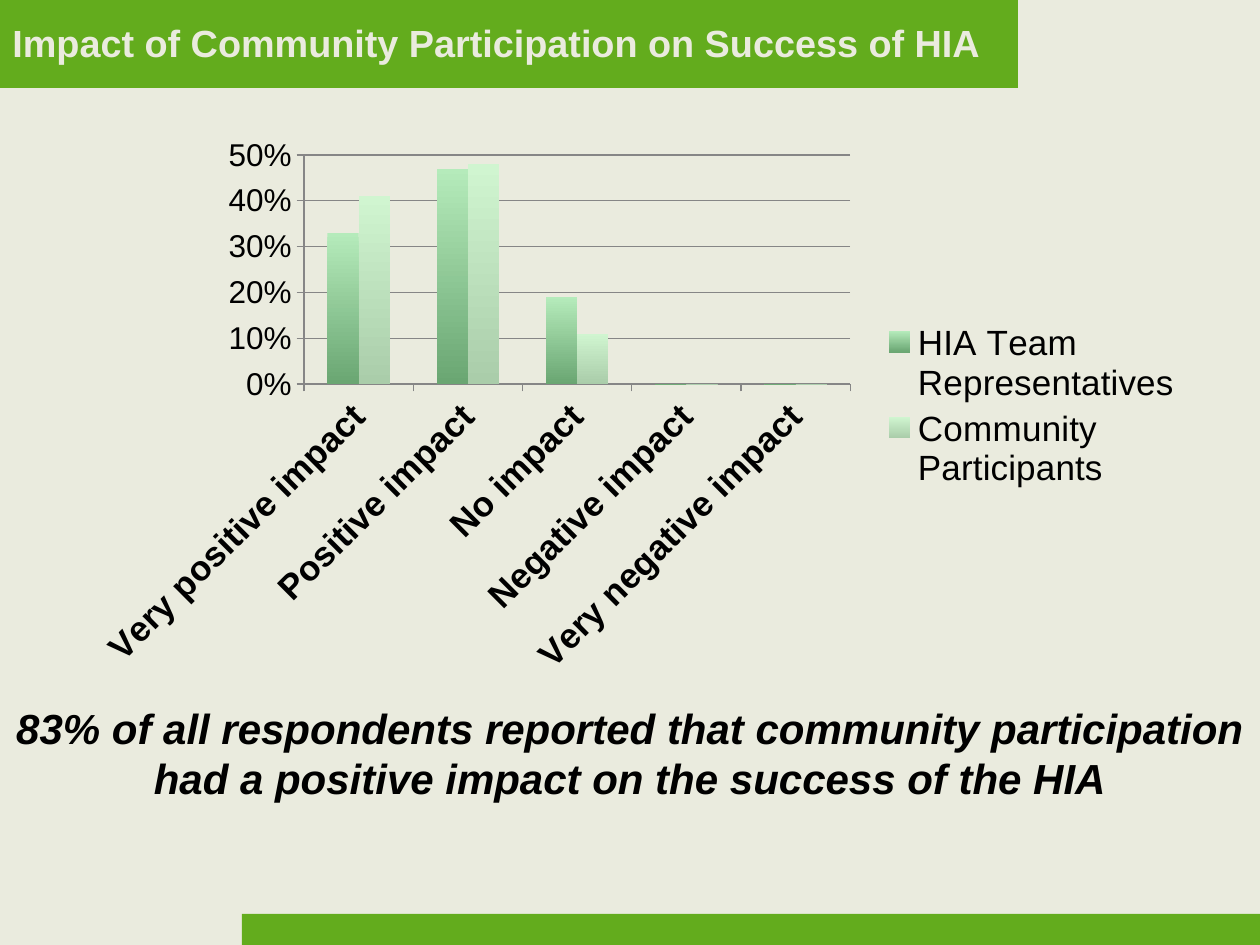
from lxml import etree
from pptx import Presentation
from pptx import util as u
from pptx.chart.data import CategoryChartData
from pptx.dml.color import RGBColor
from pptx.enum import chart as ch, shapes, text
from pptx.oxml import parse_xml
from pptx.oxml.ns import nsdecls


class Theme:
    face = "Arial"
    paper = RGBColor.from_string("EAEBDE")
    green = RGBColor.from_string("63AC1D")
    ink = RGBColor.from_string("000000")
    grid = RGBColor.from_string("868686")
    bars = [("B5EBBB", "6AA672"), ("D0F5D0", "AACDAA")]
    title, note, tick, label = 21.6, 24, 18, 20


def px(*vals):
    return [u.Inches(v / 126) for v in vals]


def write(box, words, size, color=Theme.ink, align=text.PP_ALIGN.LEFT,
          anchor=text.MSO_ANCHOR.TOP, italic=False):
    frame = slide.shapes.add_textbox(*px(*box)).text_frame
    frame.word_wrap = True
    frame.vertical_anchor = anchor
    para = frame.paragraphs[0]
    para.alignment = align
    run = para.add_run()
    run.text = words
    font = run.font
    font.name, font.size, font.color.rgb = Theme.face, u.Pt(size), color
    font.bold, font.italic = True, italic


prs = Presentation()
prs.slide_width, prs.slide_height = px(1260, 945)
slide = prs.slides.add_slide(prs.slide_layouts[6])
slide.background.fill.solid()
slide.background.fill.fore_color.rgb = Theme.paper

# Green bands at foot and head
for box in [(242, 914, 1018, 31), (0, 0, 1018, 88)]:
    band = slide.shapes.add_shape(shapes.MSO_SHAPE.RECTANGLE, *px(*box))
    band.shadow.inherit = False
    band.fill.solid()
    band.fill.fore_color.rgb = Theme.green
    band.line.fill.background()

write((0, 0, 1028, 85), "Impact of Community Participation on Success of HIA",
      Theme.title, color=Theme.paper, anchor=text.MSO_ANCHOR.MIDDLE)
write((0, 696, 1260, 114),
      "83% of all respondents reported that community participation "
      "had a positive impact on the success of the HIA",
      Theme.note, align=text.PP_ALIGN.CENTER, italic=True)

# Chart
data = CategoryChartData(number_format="0%")
data.categories = ["Very positive impact", "Positive impact", "No impact",
                   "Negative impact", "Very negative impact"]
data.add_series("HIA Team Representatives", [0.33, 0.47, 0.19, 0, 0])
data.add_series("Community Participants", [0.41, 0.48, 0.11, 0, 0])
chart = slide.shapes.add_chart(ch.XL_CHART_TYPE.COLUMN_CLUSTERED,
                               *px(81, 127, 1115, 559), data).chart
chart.has_title = False
chart.font.name, chart.font.size = Theme.face, u.Pt(Theme.tick)
chart.font.color.rgb = Theme.ink

plot = chart.plots[0]
plot.vary_by_categories = False
plot.gap_width, plot.overlap = 150, 0
for series, tones in zip(plot.series, Theme.bars):
    fill = series.format.fill
    fill.gradient()
    fill.gradient_angle = 270
    for stop, tone in zip(fill.gradient_stops, tones):
        stop.color.rgb = RGBColor.from_string(tone)

cats, vals = chart.category_axis, chart.value_axis
vals.minimum_scale, vals.maximum_scale, vals.major_unit = 0, 0.5, 0.1
vals.has_major_gridlines = True
vals.tick_labels.number_format = "0%"
vals.tick_labels.number_format_is_linked = False
for axis in (cats, vals):
    axis.major_tick_mark = ch.XL_TICK_MARK.OUTSIDE
    axis.format.line.color.rgb = Theme.grid
vals.major_gridlines.format.line.color.rgb = Theme.grid

# Slanted category labels
font = cats.tick_labels.font
font.size, font.bold = u.Pt(Theme.label), True
turn = cats._element.txPr.bodyPr
turn.set("rot", "-2700000")
turn.set("vert", "horz")

chart.has_legend = True
chart.legend.position = ch.XL_LEGEND_POSITION.RIGHT
chart.legend.include_in_layout = False
chart.legend.font.size = u.Pt(Theme.label)

# Fixed inner plot area, as shares of the chart
area = chart._chartSpace.chart.plotArea
for old in area.findall("{*}layout"):
    area.remove(old)
layout = parse_xml(f"<c:layout {nsdecls('c')}><c:manualLayout/></c:layout>")
rules = [("layoutTarget", "inner"), ("xMode", "edge"), ("yMode", "edge"),
         ("x", 0.2), ("y", 0.05), ("w", 0.49), ("h", 0.41)]
for tag, val in rules:
    etree.SubElement(layout[0], f"{{{layout.nsmap['c']}}}{tag}", val=str(val))
area.insert(0, layout)

prs.save("out.pptx")
